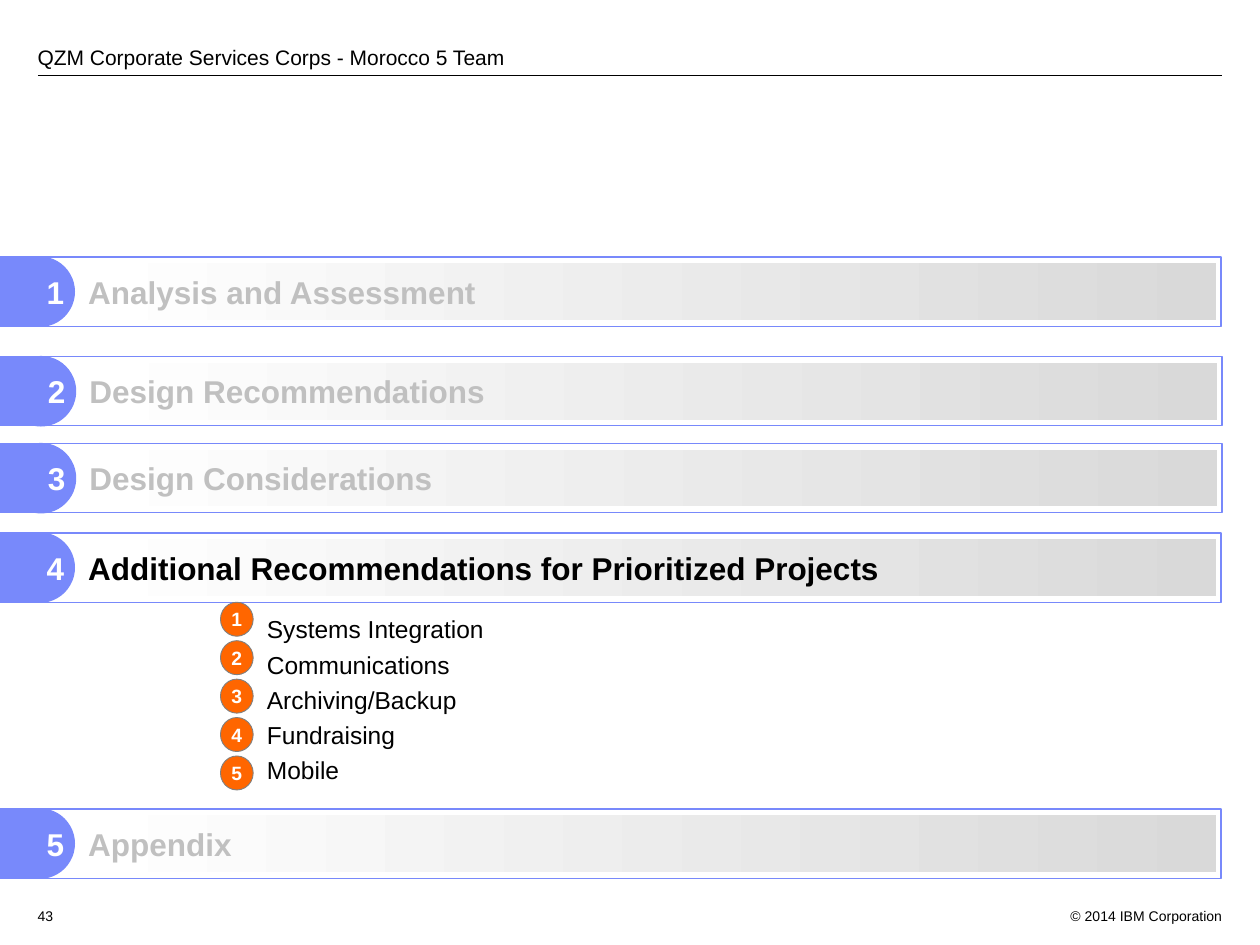
import pptx
import pptx.dml.color
import pptx.enum.shapes
import pptx.enum.text
import pptx.oxml
import pptx.util

SHAPE = pptx.enum.shapes.MSO_SHAPE
ALIGN = pptx.enum.text.PP_ALIGN
ANCHOR = pptx.enum.text.MSO_ANCHOR
COLUMNS, ROWS = 100, 75


def colour(code):
    """Turn a hex string into a colour."""
    return pptx.dml.color.RGBColor.from_string(code)


class AgendaStyle:
    """Hold the agenda's style and the slide being drawn on a grid of columns and rows."""

    font = "Arial"
    ink, muted, paper = "000000", "C0C0C0", "FFFFFF"
    accent, shade, badge_fill, badge_line = "7889FB", "D9D9D9", "FF6600", "808080"

    def __init__(self, deck):
        """Add a blank slide and size the grid cells."""
        self.page = deck.slides.add_slide(deck.slide_layouts[6])
        self.column = deck.slide_width / COLUMNS
        self.row = deck.slide_height / ROWS

    def place(self, left, top, width, height):
        """Convert grid units to slide lengths."""
        return (round(left * self.column), round(top * self.row),
                round(width * self.column), round(height * self.row))

    def fill_text(self, box, lines, size, ink, bold=False, align=ALIGN.LEFT,
                  anchor=ANCHOR.TOP, insets=(0.1, 0.05, 0.1, 0.05), wrap=True):
        """Fill a box with one paragraph per line and return the paragraphs."""
        frame = box.text_frame
        frame.word_wrap = wrap
        frame.vertical_anchor = anchor
        (frame.margin_left, frame.margin_top,
         frame.margin_right, frame.margin_bottom) = map(pptx.util.Inches, insets)
        for index, line in enumerate(lines):
            para = frame.add_paragraph() if index else frame.paragraphs[0]
            para.alignment = align
            span = para.add_run()
            span.text = line
            span.font.name = self.font
            span.font.size = pptx.util.Pt(size)
            span.font.bold = bold
            span.font.color.rgb = colour(ink)
        return frame.paragraphs

    def text(self, area, lines, size, **options):
        """Add a text box and return it with its paragraphs."""
        box = self.page.shapes.add_textbox(*self.place(*area))
        return box, self.fill_text(box, lines, size, self.ink, **options)

    def shape(self, shapes, kind, area, fill=None, line=None, weight=0.75):
        """Add a flat preset shape with an optional fill and outline."""
        box = shapes.add_shape(kind, *self.place(*area))
        box.shadow.inherit = False
        if fill:
            box.fill.solid()
            box.fill.fore_color.rgb = colour(fill)
        else:
            box.fill.background()
        if line:
            box.line.color.rgb = colour(line)
            box.line.width = pptx.util.Pt(weight)
        else:
            box.line.fill.background()
        return box

    def rule(self, left, right, top):
        """Draw a horizontal rule."""
        start_x, y, width, _ = self.place(left, top, right - left, 0)
        rule = self.page.shapes.add_connector(
            pptx.enum.shapes.MSO_CONNECTOR.STRAIGHT, start_x, y, start_x + width, y)
        rule.line.color.rgb = colour(self.ink)
        rule.line.width = pptx.util.Pt(0.75)
        rule._element.spPr.append(pptx.oxml.parse_xml(
            '<a:effectLst xmlns:a="http://schemas.openxmlformats.org/drawingml/2006/main"/>'))

    def section(self, number, title, left, top, ink):
        """Draw one numbered agenda bar as a group."""
        shapes = self.page.shapes.add_group_shape().shapes
        knob = self.shape(shapes, SHAPE.OVAL, (left + 0.5, top, 5.5, 5.5),
                          self.accent, self.accent)
        self.fill_text(knob, [str(number)], 18, self.paper, True, ALIGN.RIGHT,
                       ANCHOR.MIDDLE, (0, 0, 0, 0), False)
        self.shape(shapes, SHAPE.RECTANGLE, (left, top, 97, 5.5), line=self.accent)
        self.shape(shapes, SHAPE.RECTANGLE, (left, top, 3, 5.5), self.accent)
        bar = self.shape(shapes, SHAPE.RECTANGLE, (left + 7.1, top + 0.5, 89.5, 4.5))
        bar.fill.gradient()
        bar.fill.gradient_angle = 0
        for stop, code in zip(bar.fill.gradient_stops, (self.paper, self.shade)):
            stop.color.rgb = colour(code)
        self.fill_text(bar, [title], 18, ink, True, anchor=ANCHOR.MIDDLE,
                       insets=(0, 0.05, 0.1, 0.05), wrap=False)

    def badge(self, number, left, top):
        """Draw a small numbered circle."""
        circle = self.shape(self.page.shapes, SHAPE.OVAL, (left, top, 2.6, 2.7),
                            self.badge_fill, self.badge_line, 0.5)
        self.fill_text(circle, [str(number)], 11, self.paper, True, ALIGN.CENTER,
                       ANCHOR.MIDDLE, wrap=False)

    def topics(self, area, lines):
        """Add the indented list of topics."""
        box, paras = self.text(area, lines, 14)
        box.text_frame.auto_size = pptx.enum.text.MSO_AUTO_SIZE.SHAPE_TO_FIT_TEXT
        for para in paras:
            para.level = 1
            para.line_spacing = 1.2
            properties = para._p.get_or_add_pPr()
            properties.set("marL", str(pptx.util.Inches(0.5)))
            properties.set("indent", "0")


def main():
    """Build the agenda slide and save it."""
    deck = pptx.Presentation()
    deck.slide_width, deck.slide_height = pptx.util.Inches(10), pptx.util.Inches(7.5)
    agenda = AgendaStyle(deck)

    agenda.rule(3, 97, 6)
    agenda.text((83, 71.5, 15, 2), ["© 2014 IBM Corporation"], 8, align=ALIGN.RIGHT)
    _, header = agenda.text((2, 1.5, 86.3, 4),
                            ["QZM Corporate Services Corps - Morocco 5 Team"], 12,
                            anchor=ANCHOR.BOTTOM, insets=(0.1, 0, 0.1, 0))
    header[0].space_after = pptx.util.Pt(9)
    agenda.text((2, 71.5, 4, 2), ["43"], 8)

    sections = [
        ("Analysis and Assessment", -0.1, 20.4, agenda.muted),
        ("Design Recommendations", 0, 28.3, agenda.muted),
        ("Design Considerations", 0, 35.2, agenda.muted),
        ("Additional Recommendations for Prioritized Projects", -0.1, 42.3, agenda.ink),
        ("Appendix", -0.1, 64.2, agenda.muted),
    ]
    for number, section in enumerate(sections, 1):
        agenda.section(number, *section)

    topics = ["Systems Integration", "Communications", "Archiving/Backup",
              "Fundraising", "Mobile"]
    for index in range(len(topics)):
        agenda.badge(index + 1, 17.5, 47.8 + 3.05 * index)
    agenda.topics((15.2, 47.8, 50, 15), topics)

    deck.save("out.pptx")


if __name__ == "__main__":
    main()
